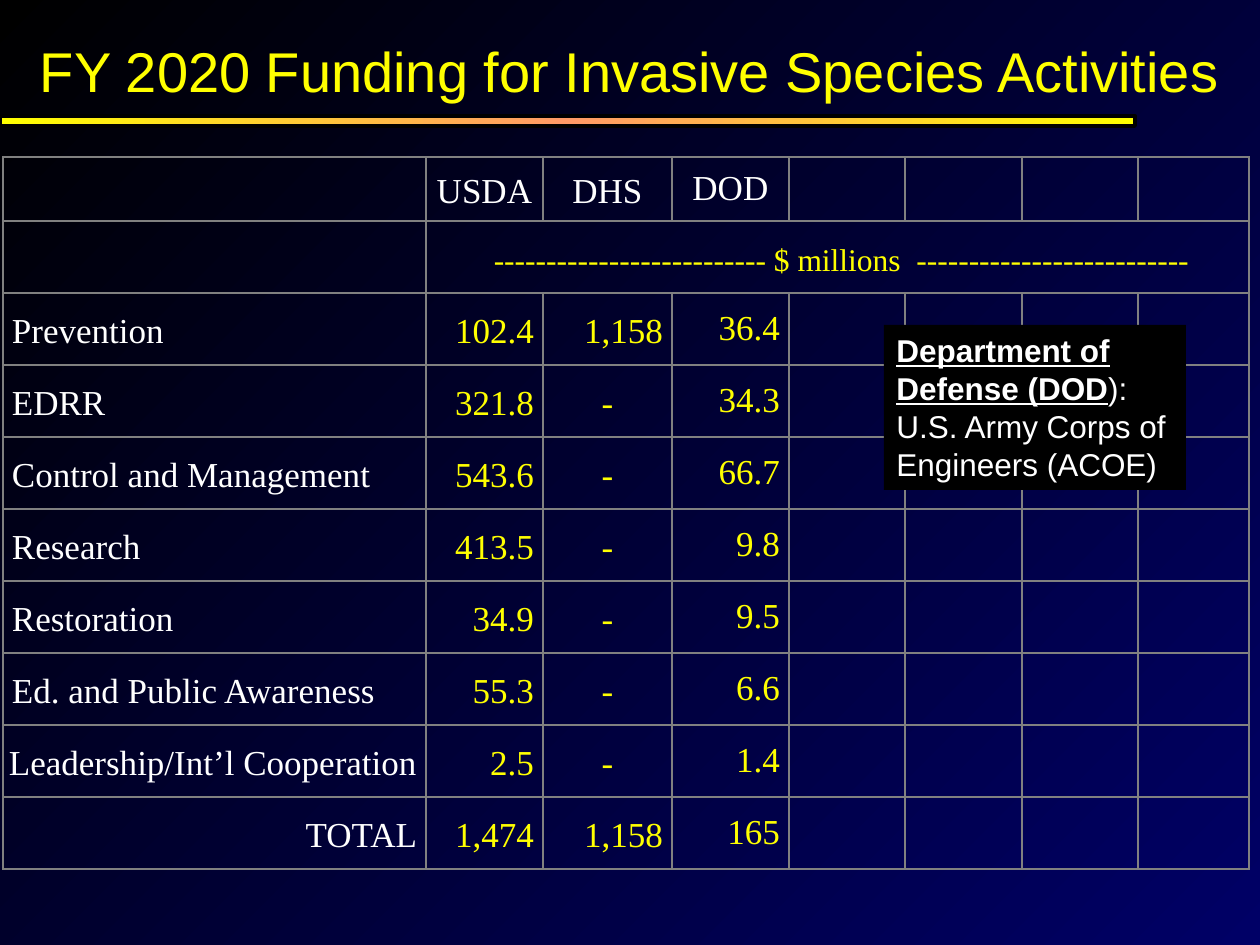
from copy import deepcopy
from dataclasses import dataclass
from itertools import product

from pptx import Presentation
from pptx.dml.color import RGBColor as Rgb
from pptx.enum.shapes import MSO_SHAPE as Shape
from pptx.enum.text import MSO_ANCHOR as Anchor, PP_ALIGN as Align
from pptx.oxml import parse_xml
from pptx.oxml.ns import nsdecls, qn
from pptx.util import Pt


@dataclass(frozen=True)
class Theme:
    """Colours, fonts and type sizes of the slide."""
    black: str = "000000"
    navy: str = "000066"
    yellow: str = "FFFF00"
    orange: str = "FF9966"
    white: str = "FFFFFF"
    grid: str = "808080"
    sans: str = "Arial"
    serif: str = "Times New Roman"
    title: int = 32
    body: int = 20
    note: int = 18


THEME = Theme()
COLS = [423, 117, 129, 117, 116, 117, 116, 111]
HEAD, ROW = 64, 72
AGENCIES = ["USDA", "DHS", "DOD"]
FUNDS = [
    ("Prevention", "102.4", "1,158", "36.4"),
    ("EDRR", "321.8", "-", "34.3"),
    ("Control and Management", "543.6", "-", "66.7"),
    ("Research", "413.5", "-", "9.8"),
    ("Restoration", "34.9", "-", "9.5"),
    ("Ed. and Public Awareness", "55.3", "-", "6.6"),
    ("Leadership/Int’l Cooperation", "2.5", "-", "1.4"),
    ("TOTAL", "1,474", "1,158", "165"),
]


def px(n):
    """Turn pixels into EMU."""
    return round(n * 914400 / 126)


def add_run(para, text, size, font, color, strong=False):
    """Append one styled run to a paragraph."""
    run = para.add_run()
    run.text = text
    run.font.size = Pt(size)
    run.font.name = font
    run.font.color.rgb = Rgb.from_string(color)
    run.font.bold = run.font.underline = strong


def paint(fill, colors, angle):
    """Colour the stops of a gradient fill."""
    fill.gradient_angle = angle
    for i, (stop, color) in enumerate(zip(fill.gradient_stops, colors)):
        stop.color.rgb = Rgb.from_string(color)
        stop.position = i / (len(colors) - 1)


def add_back(slide):
    """Fill the background from black to navy."""
    fill = slide.background.fill
    fill.gradient()
    paint(fill, [THEME.black, THEME.navy], 315)


def add_title(slide):
    """Add the centred title."""
    frame = slide.shapes.add_textbox(0, 0, px(1260), px(141)).text_frame
    frame.word_wrap = True
    frame.vertical_anchor = Anchor.MIDDLE
    para = frame.paragraphs[0]
    para.alignment = Align.CENTER
    add_run(para, "FY 2020 Funding for Invasive Species Activities",
            THEME.title, THEME.sans, THEME.yellow)


def add_box(slide, *rect):
    """Add a plain rectangle without shadow."""
    box = slide.shapes.add_shape(Shape.RECTANGLE, *map(px, rect))
    box.shadow.inherit = False
    return box


def add_bar(slide):
    """Add the gradient bar below the title."""
    bar = add_box(slide, 0, 116, 1135, 10)
    bar.line.color.rgb = Rgb.from_string(THEME.black)
    bar.line.width = Pt(2.25)
    bar.fill.gradient()
    stops = bar._element.spPr.find(".//" + qn("a:gsLst"))
    stops.insert(1, deepcopy(stops[0]))
    paint(bar.fill, [THEME.yellow, THEME.orange, THEME.yellow], 0)


def rule_cell(cell):
    """Clear the fill of a cell and draw its four borders."""
    cell.fill.background()
    props = cell._tc.get_or_add_tcPr()
    for i, side in enumerate(("lnL", "lnR", "lnT", "lnB")):
        props.insert(i, parse_xml(
            f'<a:{side} {nsdecls("a")} w="12700"><a:solidFill>'
            f'<a:srgbClr val="{THEME.grid}"/></a:solidFill></a:{side}>'))


def fill_cell(cell, runs, align, color, lead=1.15, pad=(9, 9)):
    """Write runs of text and size into a cell."""
    cell.vertical_anchor = Anchor.MIDDLE
    cell.margin_left, cell.margin_right = map(px, pad)
    cell.margin_top = cell.margin_bottom = 0
    para = cell.text_frame.paragraphs[0]
    para.alignment = align
    para.line_spacing = lead
    for text, size in runs:
        add_run(para, text, size, THEME.serif, color)


def add_grid(slide):
    """Add the empty ruled table."""
    count = len(FUNDS) + 2
    table = slide.shapes.add_table(
        count, len(COLS), px(3), px(157), px(sum(COLS)),
        px(HEAD + ROW * (count - 1))).table
    table.first_row = table.horz_banding = False
    for col, wide in zip(table.columns, COLS):
        col.width = px(wide)
    for i, row in enumerate(table.rows):
        row.height = px(ROW if i else HEAD)
    for r, c in product(range(count), range(len(COLS))):
        rule_cell(table.cell(r, c))
    return table


def add_funds(slide):
    """Add the funding table with its text."""
    table = add_grid(slide)
    last = len(AGENCIES)
    for c, name in enumerate(AGENCIES, 1):
        fill_cell(table.cell(0, c), [(name, THEME.body)], Align.CENTER,
                  THEME.white, 1 if c == last else 1.15)
    unit = table.cell(1, 1)
    unit.merge(table.cell(1, len(COLS) - 1))
    dash = "-" * 26
    fill_cell(unit, [(" ", THEME.body),
                     (f"{dash} $ millions  {dash}", THEME.note)],
              Align.CENTER, THEME.yellow)
    for r, (label, *sums) in enumerate(FUNDS, 2):
        fill_cell(table.cell(r, 0), [(label, THEME.body)],
                  Align.RIGHT if label == "TOTAL" else Align.LEFT,
                  THEME.white,
                  pad=(6, 0) if label.startswith("Leader") else (9, 9))
        for c, text in enumerate(sums, 1):
            fill_cell(table.cell(r, c), [(text, THEME.body)],
                      Align.CENTER if text == "-" else Align.RIGHT,
                      THEME.yellow, 1 if c == last else 1.15)


def add_note(slide):
    """Add the black box that explains DOD."""
    box = add_box(slide, 884, 325, 302, 165)
    box.fill.solid()
    box.fill.fore_color.rgb = Rgb.from_string(THEME.black)
    box.line.fill.background()
    frame = box.text_frame
    frame.word_wrap = True
    frame.vertical_anchor = Anchor.TOP
    para = frame.paragraphs[0]
    para.alignment = Align.LEFT
    style = THEME.note, THEME.sans, THEME.white
    add_run(para, "Department of Defense (DOD", *style, strong=True)
    add_run(para, "): U.S. Army Corps of Engineers (ACOE)", *style)


def main():
    """Build and save the slide."""
    deck = Presentation()
    deck.slide_width, deck.slide_height = px(1260), px(945)
    slide = deck.slides.add_slide(deck.slide_layouts[6])
    for add in (add_back, add_title, add_bar, add_funds, add_note):
        add(slide)
    deck.save("out.pptx")


if __name__ == "__main__":
    main()
